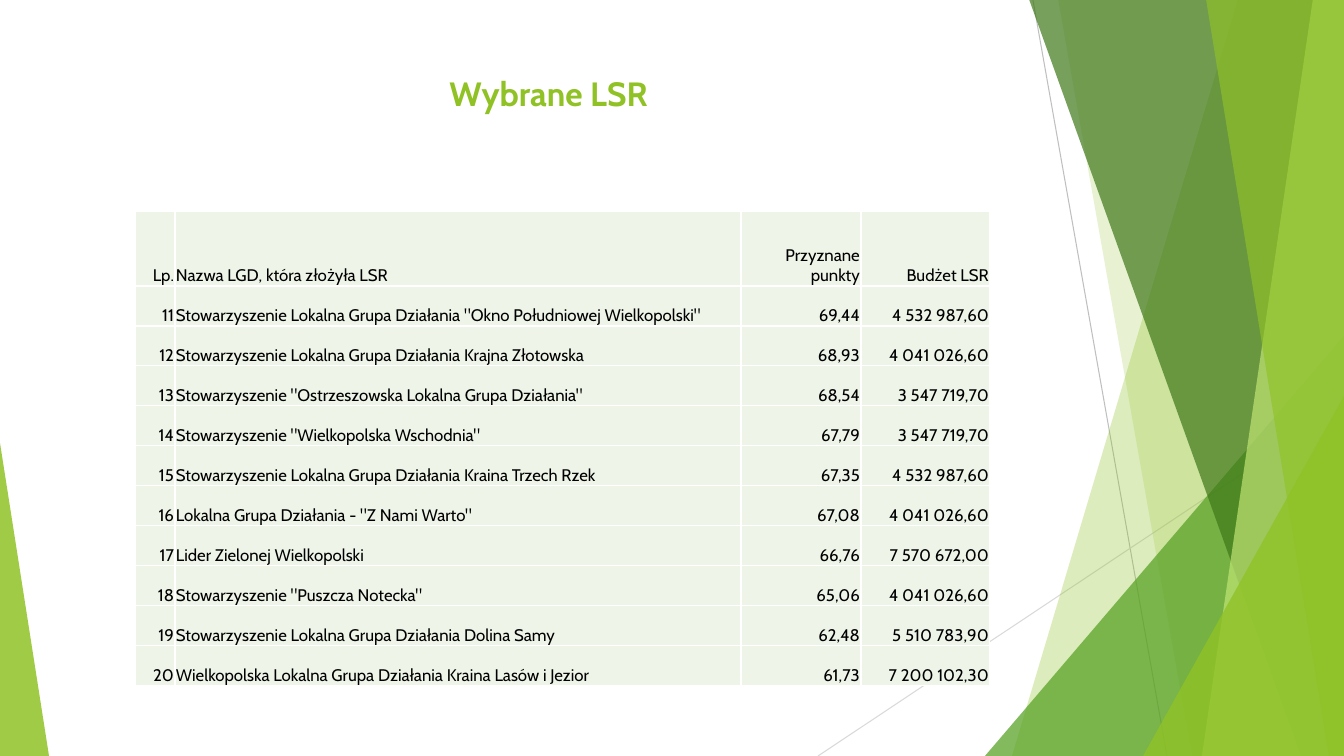
"""Builds the slide listing the selected LSR strategies, places 11 to 20."""
import pptx
import pptx.dml.color
import pptx.enum.shapes
import pptx.enum.text
import pptx.oxml
import pptx.oxml.ns
import pptx.util

PX = 914400 / 100.8
WIDTH, HEIGHT = 1344, 756
FONT = "Cabin"
COLORS = {
    "lime": "90C226",
    "green": "54A021",
    "forest": "3F7819",
    "pale": "C0E474",
    "line_dark": "BFBFBF",
    "line_light": "D9D9D9",
    "cell": "EEF4E8",
    "border": "FFFFFF",
    "text": "000000",
}
RGB = {name: pptx.dml.color.RGBColor.from_string(code) for name, code in COLORS.items()}
ALIGN = pptx.enum.text.PP_ALIGN
ANCHOR = pptx.enum.text.MSO_ANCHOR


def px(length):
    return pptx.util.Emu(round(length * PX))


def write_text(frame, text, size=12, color="text", bold=False, align=ALIGN.LEFT):
    paragraph = frame.paragraphs[0]
    paragraph.alignment = align
    run = paragraph.add_run()
    run.text = text
    run.font.name = FONT
    run.font.size = pptx.util.Pt(size)
    run.font.bold = bold
    run.font.color.rgb = RGB[color]


presentation = pptx.Presentation()
presentation.slide_width = px(WIDTH)
presentation.slide_height = px(HEIGHT)
slide = presentation.slides.add_slide(presentation.slide_layouts[6])
shapes = slide.shapes

rays = [
    (1033, 0, 1167, HEIGHT, "line_dark"),
    (WIDTH, 406, 818, HEIGHT, "line_light"),
]
for x1, y1, x2, y2, color in rays:
    ray = shapes.add_connector(
        pptx.enum.shapes.MSO_CONNECTOR.STRAIGHT, px(x1), px(y1), px(x2), px(y2)
    )
    ray.line.color.rgb = RGB[color]
    ray.line.width = pptx.util.Pt(0.75)
    pptx.oxml.ns.qn("a:effectLst")
    ray._element.spPr.append(ray._element.makeelement(pptx.oxml.ns.qn("a:effectLst")))

facets = [
    ("pane", (1238, 1012), "lime", 30),
    ("pane", (1058, 1192), "lime", 20),
    ("triangle", (985, 336, 359, 1), "green", 72),
    ("pane", (1029, 1301), "forest", 70),
    ("pane", (1313, 1202), "pale", 70),
    ("pane", (1206, 1329), "lime", 65),
    ("triangle", (1143, 396, 201, 1), "lime", 80),
    ("triangle", (0, 443, 49, 0), "lime", 85),
]
for kind, geometry, color, opacity in facets:
    if kind == "pane":
        top_x, bottom_x = geometry
        outline = shapes.build_freeform(top_x, -1, scale=PX)
        outline.add_line_segments([(WIDTH, -1), (WIDTH, HEIGHT), (bottom_x, HEIGHT)])
        facet = outline.convert_to_shape()
    else:
        left, top, width, apex = geometry
        facet = shapes.add_shape(
            pptx.enum.shapes.MSO_SHAPE.ISOSCELES_TRIANGLE,
            px(left), px(top), px(width), px(HEIGHT - top),
        )
        facet.adjustments[0] = apex
    facet.shadow.inherit = False
    facet.line.fill.background()
    facet.fill.solid()
    facet.fill.fore_color.rgb = RGB[color]
    tint = facet._element.spPr.find(".//" + pptx.oxml.ns.qn("a:srgbClr"))
    alpha = tint.makeelement(pptx.oxml.ns.qn("a:alpha"), {"val": str(opacity * 1000)})
    tint.append(alpha)

title = shapes.add_textbox(px(75), px(68), px(947), px(72)).text_frame
title.word_wrap = True
title.vertical_anchor = ANCHOR.TOP
write_text(title, "Wybrane LSR", size=24, color="lime", bold=True, align=ALIGN.CENTER)

header = ("Lp.", "Nazwa LGD, która złożyła LSR", "Przyznane punkty", "Budżet LSR")
groups = [
    ('Stowarzyszenie Lokalna Grupa Działania "Okno Południowej Wielkopolski"', "69,44", "4 532 987,60"),
    ("Stowarzyszenie Lokalna Grupa Działania Krajna Złotowska", "68,93", "4 041 026,60"),
    ('Stowarzyszenie "Ostrzeszowska Lokalna Grupa Działania"', "68,54", "3 547 719,70"),
    ('Stowarzyszenie "Wielkopolska Wschodnia"', "67,79", "3 547 719,70"),
    ("Stowarzyszenie Lokalna Grupa Działania Kraina Trzech Rzek", "67,35", "4 532 987,60"),
    ('Lokalna Grupa Działania - "Z Nami Warto"', "67,08", "4 041 026,60"),
    ("Lider Zielonej Wielkopolski", "66,76", "7 570 672,00"),
    ('Stowarzyszenie "Puszcza Notecka"', "65,06", "4 041 026,60"),
    ("Stowarzyszenie Lokalna Grupa Działania Dolina Samy", "62,48", "5 510 783,90"),
    ("Wielkopolska Lokalna Grupa Działania Kraina Lasów i Jezior", "61,73", "7 200 102,30"),
]
ranking = [header] + [(str(place), *group) for place, group in enumerate(groups, 11)]
column_widths = [40, 566, 120, 129]
row_heights = [75] + [40] * len(groups)

table = shapes.add_table(
    len(ranking), len(header), px(135), px(211), px(sum(column_widths)), px(sum(row_heights))
).table
table.first_row = False
table.horz_banding = False
for column, width in zip(table.columns, column_widths):
    column.width = px(width)
for row, height, entries in zip(table.rows, row_heights, ranking):
    row.height = px(height)
    for index, (cell, entry) in enumerate(zip(row.cells, entries)):
        cell.margin_left = cell.margin_right = cell.margin_top = px(1)
        cell.margin_bottom = 0
        cell.vertical_anchor = ANCHOR.BOTTOM
        cell.fill.solid()
        cell.fill.fore_color.rgb = RGB["cell"]
        write_text(cell.text_frame, entry, align=ALIGN.LEFT if index == 1 else ALIGN.RIGHT)
        for order, side in enumerate("LRTB"):
            border = pptx.oxml.parse_xml(
                f'<a:ln{side} {pptx.oxml.ns.nsdecls("a")} w="12700"><a:solidFill>'
                f'<a:srgbClr val="{COLORS["border"]}"/></a:solidFill></a:ln{side}>'
            )
            cell._tc.get_or_add_tcPr().insert(order, border)

presentation.save("out.pptx")
